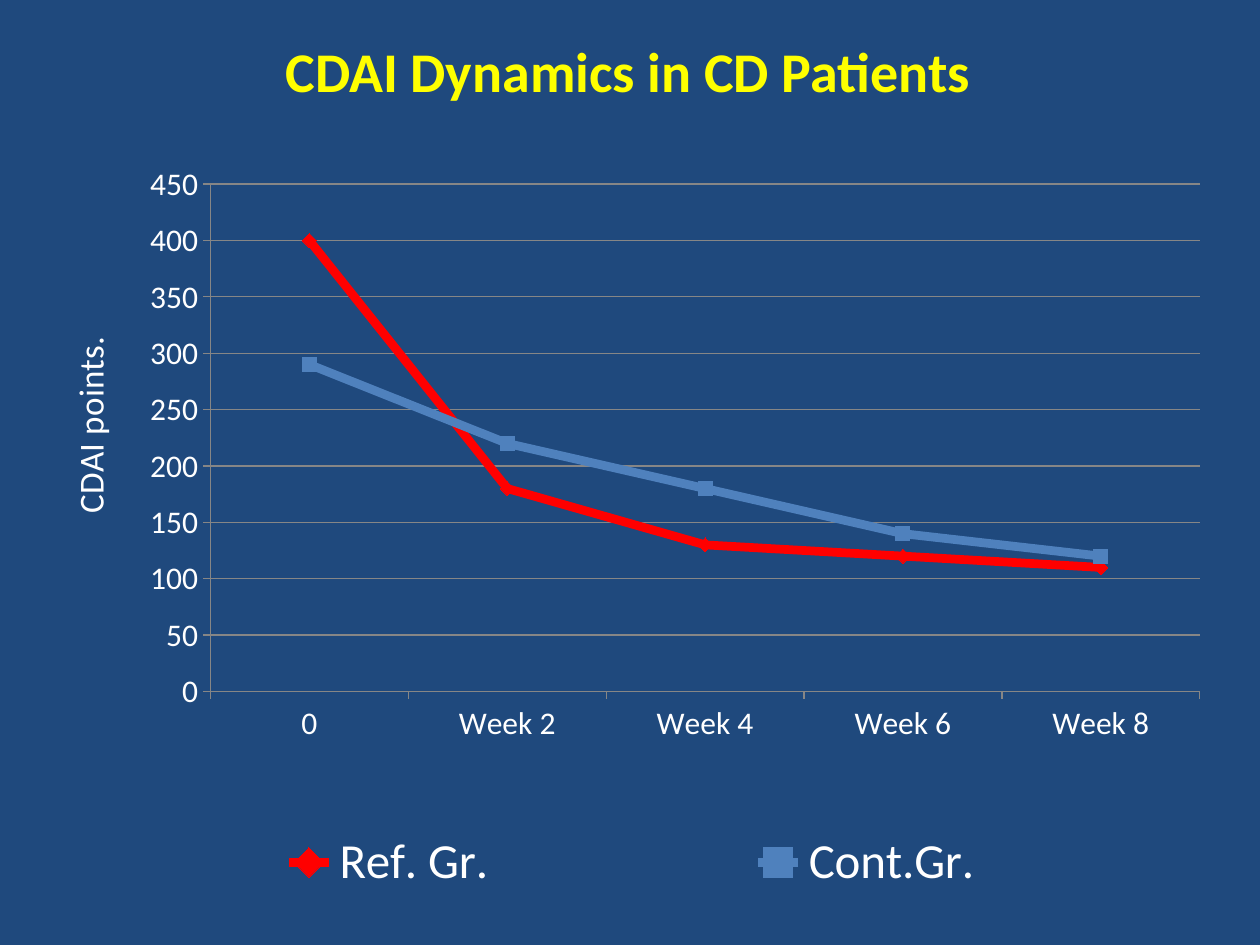
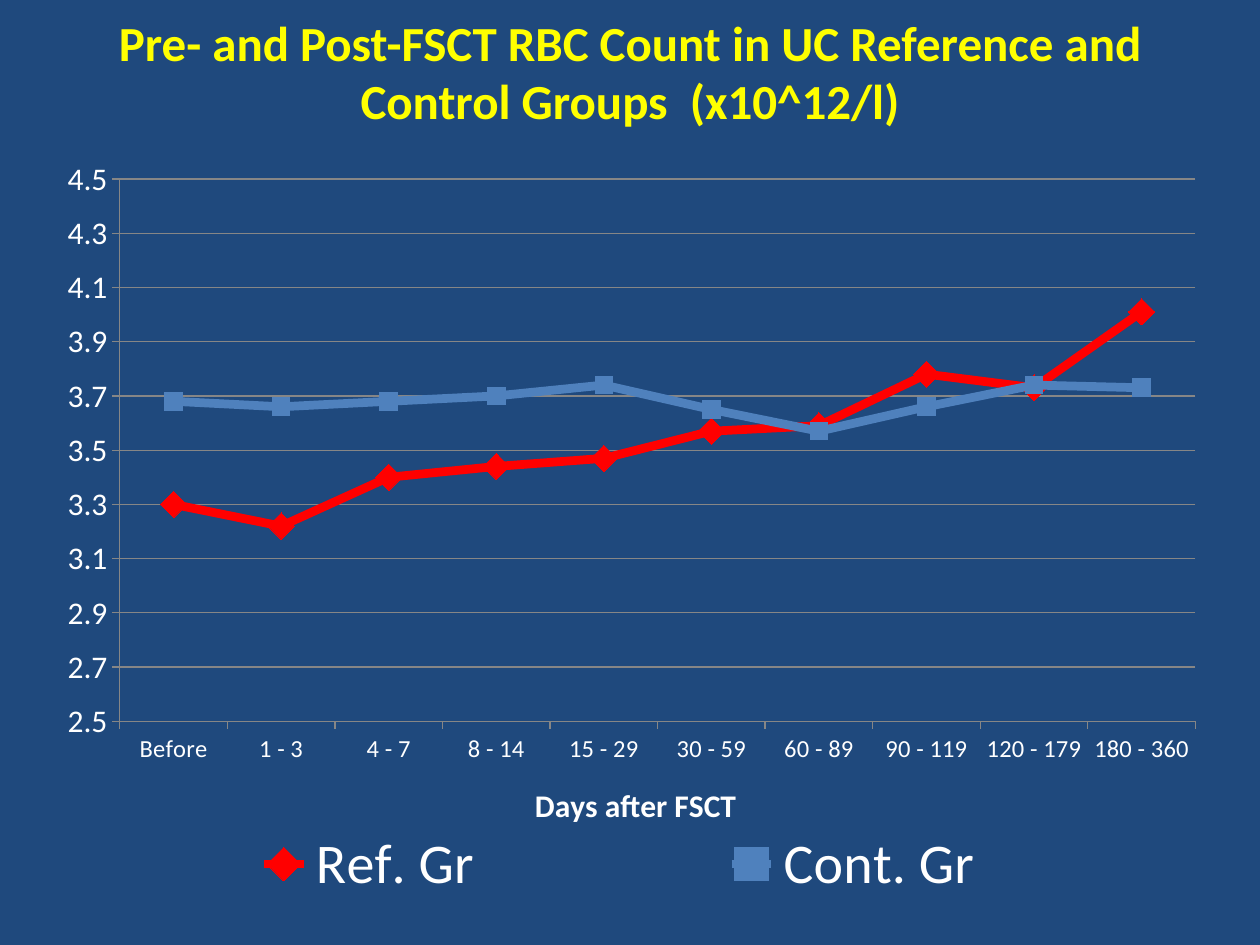
from dataclasses import dataclass

from lxml.etree import SubElement
from pptx import Presentation
from pptx.chart.data import CategoryChartData
from pptx.dml.color import RGBColor
from pptx.enum.chart import XL_CHART_TYPE, XL_LEGEND_POSITION, XL_MARKER_STYLE, XL_TICK_MARK
from pptx.enum.text import MSO_ANCHOR, MSO_AUTO_SIZE, PP_ALIGN
from pptx.oxml.ns import qn
from pptx.util import Pt

# Content: boxes in points, chart layouts as fractions of the chart
SLIDES = [
    {
        "title": "CDAI Dynamics in CD Patients",
        "title_box": (16, 9, 686, 62.5),
        "title_size": 32,
        "chart_box": (20, 94.3, 682, 428.5),
        "categories": ["0", "Week 2", "Week 4", "Week 6", "Week 8"],
        "groups": {
            "Ref. Gr.": [400, 180, 130, 120, 110],
            "Cont.Gr.": [290, 220, 180, 140, 120],
        },
        "marker_sizes": (8, 8),
        "scale": {"minimum_scale": 0, "maximum_scale": 450, "major_unit": 50},
        "number_format": "General",
        "category_size": 18,
        "axis_title": ("value_axis", "CDAI points.", 20, False, (0.02, 0.22)),
        "plot": (0.147, 0.025, 0.829, 0.677),
        "legend": (0, 0.87, 1, 0.12),
        "legend_size": 28,
    },
    {
        "title": "Pre- and Post-FSCT RBC Count in UC Reference and Control Groups  (х10^12/l)",
        "title_box": (36, 15, 648, 51),
        "title_size": 28,
        "chart_box": (14.3, 77.2, 686, 448),
        "categories": ["Before", "1 - 3", "4 - 7", "8 - 14", "15 - 29", "30 - 59",
                       "60 - 89", "90 - 119", "120 - 179", "180 - 360"],
        "groups": {
            "Ref. Gr": [3.3, 3.22, 3.4, 3.44, 3.47, 3.57, 3.59, 3.78, 3.73, 4.01],
            "Cont. Gr": [3.68, 3.66, 3.68, 3.7, 3.74, 3.65, 3.57, 3.66, 3.74, 3.73],
        },
        "marker_sizes": (15, 10),
        "scale": {"minimum_scale": 2.5, "maximum_scale": 4.5, "major_unit": 0.2},
        "number_format": "0.0",
        "category_size": 14,
        "axis_title": ("category_axis", "Days after FSCT", 18, True, (0.42, 0.82)),
        "plot": (0.079, 0.056, 0.896, 0.692),
        "legend": (0, 0.87, 0.99, 0.12),
        "legend_size": 32,
    },
]


@dataclass(frozen=True)
class Theme:
    background: RGBColor = RGBColor(0x1F, 0x49, 0x7D)
    heading: RGBColor = RGBColor(0xFF, 0xFF, 0x00)
    text: RGBColor = RGBColor(0xFF, 0xFF, 0xFF)
    grid: RGBColor = RGBColor(0x86, 0x86, 0x86)
    groups: tuple = (RGBColor(0xFF, 0x00, 0x00), RGBColor(0x4F, 0x81, 0xBD))
    markers: tuple = (XL_MARKER_STYLE.DIAMOND, XL_MARKER_STYLE.SQUARE)
    face: str = "Calibri"
    label_size: int = 18
    group_width: float = 5
    grid_width: float = 0.75


THEME = Theme()


# Shared formatting
def set_all(target, values):
    for name, value in values.items():
        setattr(target, name, value)


def style_font(font, size, color=THEME.text, bold=False):
    set_all(font, {"name": THEME.face, "size": Pt(size), "bold": bold})
    font.color.rgb = color


def style_line(line, color, width):
    line.color.rgb = color
    line.width = Pt(width)


def place_in_chart(part, fractions, inner=False):
    """Give a plot area, legend or axis title a fixed place in its chart."""
    layout = part.find(qn("c:layout"))
    if layout is None:
        layout = SubElement(part, qn("c:layout"))
        leaders = [child for child in part if child.tag in (qn("c:tx"), qn("c:legendPos"))]
        part.insert(len(leaders), layout)
    manual = SubElement(layout, qn("c:manualLayout"))
    settings = [("layoutTarget", "inner")] if inner else []
    settings += [("xMode", "edge"), ("yMode", "edge")]
    settings += zip("xywh", fractions)
    for name, value in settings:
        SubElement(manual, qn(f"c:{name}")).set("val", str(value))


# Slide parts
def add_title(slide, content):
    title = slide.shapes.title
    set_all(title, dict(zip(("left", "top", "width", "height"), map(Pt, content["title_box"]))))
    frame = title.text_frame
    frame.text = content["title"]
    set_all(frame, {"word_wrap": True, "auto_size": MSO_AUTO_SIZE.NONE,
                    "vertical_anchor": MSO_ANCHOR.MIDDLE})
    frame.paragraphs[0].alignment = PP_ALIGN.CENTER
    style_font(frame.paragraphs[0].runs[0].font, content["title_size"], THEME.heading, True)


def format_axes(chart, content):
    sizes = {"category_axis": content["category_size"], "value_axis": THEME.label_size}
    for name, size in sizes.items():
        axis = getattr(chart, name)
        set_all(axis, {"major_tick_mark": XL_TICK_MARK.OUTSIDE,
                       "minor_tick_mark": XL_TICK_MARK.NONE,
                       "has_major_gridlines": name == "value_axis"})
        style_font(axis.tick_labels.font, size)
        style_line(axis.format.line, THEME.grid, THEME.grid_width)
    values = chart.value_axis
    set_all(values, content["scale"])
    set_all(values.tick_labels, {"number_format": content["number_format"],
                                 "number_format_is_linked": False})
    style_line(values.major_gridlines.format.line, THEME.grid, THEME.grid_width)

    name, wording, size, bold, place = content["axis_title"]
    axis_title = getattr(chart, name).axis_title
    axis_title.text_frame.text = wording
    style_font(axis_title.text_frame.paragraphs[0].runs[0].font, size, bold=bold)
    place_in_chart(axis_title.element, place)


def format_groups(chart, marker_sizes):
    looks = zip(chart.plots[0].series, THEME.groups, THEME.markers, marker_sizes)
    for group, color, marker, size in looks:
        group.smooth = False
        style_line(group.format.line, color, THEME.group_width)
        set_all(group.marker, {"style": marker, "size": size})
        group.marker.format.fill.solid()
        group.marker.format.fill.fore_color.rgb = color
        group.marker.format.line.color.rgb = color


def add_line_chart(slide, content):
    data = CategoryChartData()
    data.categories = content["categories"]
    for name, values in content["groups"].items():
        data.add_series(name, values)
    chart = slide.shapes.add_chart(
        XL_CHART_TYPE.LINE_MARKERS, *map(Pt, content["chart_box"]), data).chart
    set_all(chart, {"has_title": False, "has_legend": True})
    style_font(chart.font, THEME.label_size)
    chart.plots[0].vary_by_categories = False
    format_axes(chart, content)
    format_groups(chart, content["marker_sizes"])

    # Legend and plot area
    set_all(chart.legend, {"position": XL_LEGEND_POSITION.BOTTOM, "include_in_layout": False})
    style_font(chart.legend.font, content["legend_size"])
    chart_root = chart.element
    place_in_chart(chart_root.find(f".//{qn('c:legend')}"), content["legend"])
    place_in_chart(chart_root.find(f".//{qn('c:plotArea')}"), content["plot"], inner=True)


def main():
    deck = Presentation()
    deck.slide_width, deck.slide_height = Pt(720), Pt(540)
    title_only = deck.slide_layouts[5]
    for content in SLIDES:
        slide = deck.slides.add_slide(title_only)
        slide.background.fill.solid()
        slide.background.fill.fore_color.rgb = THEME.background
        add_title(slide, content)
        add_line_chart(slide, content)
    deck.save("out.pptx")


if __name__ == "__main__":
    main()
